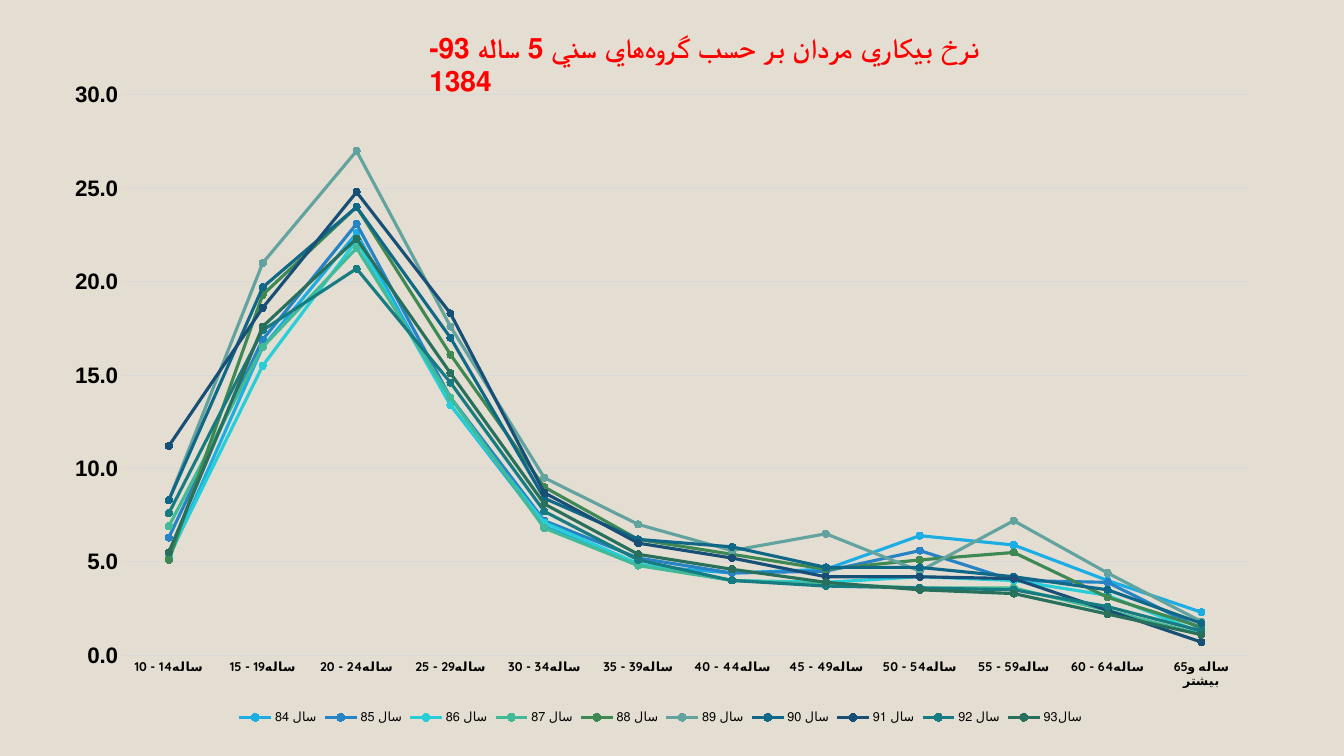
from lxml import etree
from pptx import Presentation
from pptx import util as u
from pptx.chart.data import CategoryChartData
from pptx.dml.color import RGBColor
from pptx.enum import chart as ch, shapes, text
from pptx.oxml.ns import qn

NON_JOINER = chr(0x200C)  # keeps two Persian letters apart
HEADING = f"نرخ بيكاري مردان بر حسب گروه{NON_JOINER}هاي سني 5 ساله 93-1384"
AGES = [f"{start} - {start + 4}ساله" for start in range(10, 65, 5)] + ["65ساله و بيشتر"]

# Year: (line colour, unemployment rate per age group)
RATES = {
    "سال 84": ("1CADE4", [5.2, 16.5, 22.6, 13.4, 6.9, 4.8, 4.4, 4.6, 6.4, 5.9, 4, 2.3]),
    "سال 85": ("2683C6", [6.3, 16.9, 23.1, 13.8, 7.2, 5.2, 4.4, 4.5, 5.6, 4, 3.9, 1.4]),
    "سال 86": ("27CED7", [5.3, 15.5, 22.2, 13.4, 7.1, 4.9, 4, 3.9, 4.2, 4, 3.2, 1.2]),
    "سال 87": ("42BA97", [6.9, 16.5, 21.8, 13.8, 6.8, 4.8, 4, 3.8, 3.6, 3.6, 2.4, 1.1]),
    "سال 88": ("3E8853", [5.1, 19.3, 24, 16.1, 9, 6.2, 5.4, 4.6, 5.1, 5.5, 3.1, 1.5]),
    "سال 89": ("62A39F", [8.3, 21, 27, 17.6, 9.5, 7, 5.6, 6.5, 4.5, 7.2, 4.4, 1.8]),
    "سال 90": ("106889", [8.3, 19.7, 24, 17, 8.4, 6.2, 5.8, 4.7, 4.7, 4.2, 3.5, 1.7]),
    "سال 91": ("174F77", [11.2, 18.6, 24.8, 18.3, 8.7, 6, 5.2, 4.2, 4.2, 4.1, 2.4, 0.7]),
    "سال 92": ("177C81", [7.6, 17.4, 20.7, 14.6, 7.7, 5.1, 4, 3.7, 3.6, 3.5, 2.6, 1.3]),
    "سال93": ("28705B", [5.5, 17.6, 22.3, 15.1, 8.1, 5.4, 4.6, 3.9, 3.5, 3.3, 2.2, 1.1]),
}


def colour(value):
    return RGBColor.from_string(value)


class RateSlide:
    FONT, NUMBER_FONT = "Quicksand", "Arial"
    BACK, GRID, INK, TITLE = "E3DED1", "D9D9D9", "000000", "FF0000"

    def __init__(self, deck):
        self.page = deck.slides.add_slide(deck.slide_layouts[6])
        fill = self.page.background.fill
        fill.solid()
        fill.fore_color.rgb = colour(self.BACK)

    def style(self, font, size, ink=INK, bold=False, name=FONT):
        font.size, font.bold, font.name = u.Pt(size), bold, name
        font.color.rgb = colour(ink)

    def stroke(self, line, ink, width):
        line.color.rgb = colour(ink)
        line.width = u.Pt(width)

    def panel(self, *area):
        box = self.page.shapes.add_shape(shapes.MSO_SHAPE.RECTANGLE, *map(u.Cm, area))
        box.shadow.inherit = False
        box.fill.solid()
        box.fill.fore_color.rgb = colour(self.BACK)
        box.line.fill.background()

    def title(self, wording, *area):
        frame = self.page.shapes.add_textbox(*map(u.Cm, area)).text_frame
        frame.word_wrap = True
        frame.auto_size = text.MSO_AUTO_SIZE.SHAPE_TO_FIT_TEXT
        para = frame.paragraphs[0]
        para.text = wording
        self.style(para.font, 20, self.TITLE, True)

    def line_chart(self, ages, rates, *area):
        data = CategoryChartData(number_format="0.0")
        data.categories = ages
        for year, (_, values) in rates.items():
            data.add_series(year, values)
        chart = self.page.shapes.add_chart(
            ch.XL_CHART_TYPE.LINE_MARKERS, *map(u.Cm, area), data).chart
        chart.has_title = False
        self.style(chart.font, 10)

        # Year lines
        plot = chart.plots[0]
        plot.vary_by_categories = False
        for series, (ink, _) in zip(plot.series, rates.values()):
            series.smooth = False
            self.stroke(series.format.line, ink, 2.25)
            marker = series.marker
            marker.style, marker.size = ch.XL_MARKER_STYLE.CIRCLE, 5
            marker.format.fill.solid()
            marker.format.fill.fore_color.rgb = colour(ink)
            self.stroke(marker.format.line, ink, 0.75)

        # Axes
        age_axis, rate_axis = chart.category_axis, chart.value_axis
        for axis in (age_axis, rate_axis):
            axis.major_tick_mark = axis.minor_tick_mark = ch.XL_TICK_MARK.NONE
        self.style(age_axis.tick_labels.font, 9, bold=True)
        self.stroke(age_axis.format.line, self.GRID, 0.75)
        self.style(rate_axis.tick_labels.font, 16, bold=True, name=self.NUMBER_FONT)
        rate_axis.tick_labels.number_format = "0.0"
        rate_axis.tick_labels.number_format_is_linked = False
        rate_axis.minimum_scale, rate_axis.maximum_scale, rate_axis.major_unit = 0, 30, 5
        rate_axis.format.line.fill.background()
        self.stroke(rate_axis.major_gridlines.format.line, self.GRID, 0.75)

        # Legend
        chart.has_legend = True
        chart.legend.position = ch.XL_LEGEND_POSITION.BOTTOM
        chart.legend.include_in_layout = False
        self.style(chart.legend.font, 9)
        self.place_plot(chart, x=0.06, y=0.04, w=0.92, h=0.85)

    def place_plot(self, chart, **shares):
        plot_area = chart._chartSpace.chart.plotArea
        for old in plot_area.findall(qn("c:layout")):
            plot_area.remove(old)
        layout = etree.Element(qn("c:layout"))
        manual = etree.SubElement(layout, qn("c:manualLayout"))
        settings = {"layoutTarget": "inner", "xMode": "edge", "yMode": "edge", **shares}
        for tag, value in settings.items():
            etree.SubElement(manual, qn(f"c:{tag}")).set("val", str(value))
        plot_area.insert(0, layout)


def main():
    deck = Presentation()
    deck.slide_width, deck.slide_height = u.Cm(33.87), u.Cm(19.05)
    slide = RateSlide(deck)
    slide.panel(0.66, 0.66, 32.56, 17.73)
    slide.line_chart(AGES, RATES, 1.22, 1.73, 30.86, 16.61)
    slide.title(HEADING, 10.57, 0.64, 15.29, 1.96)
    deck.save("out.pptx")


if __name__ == "__main__":
    main()
